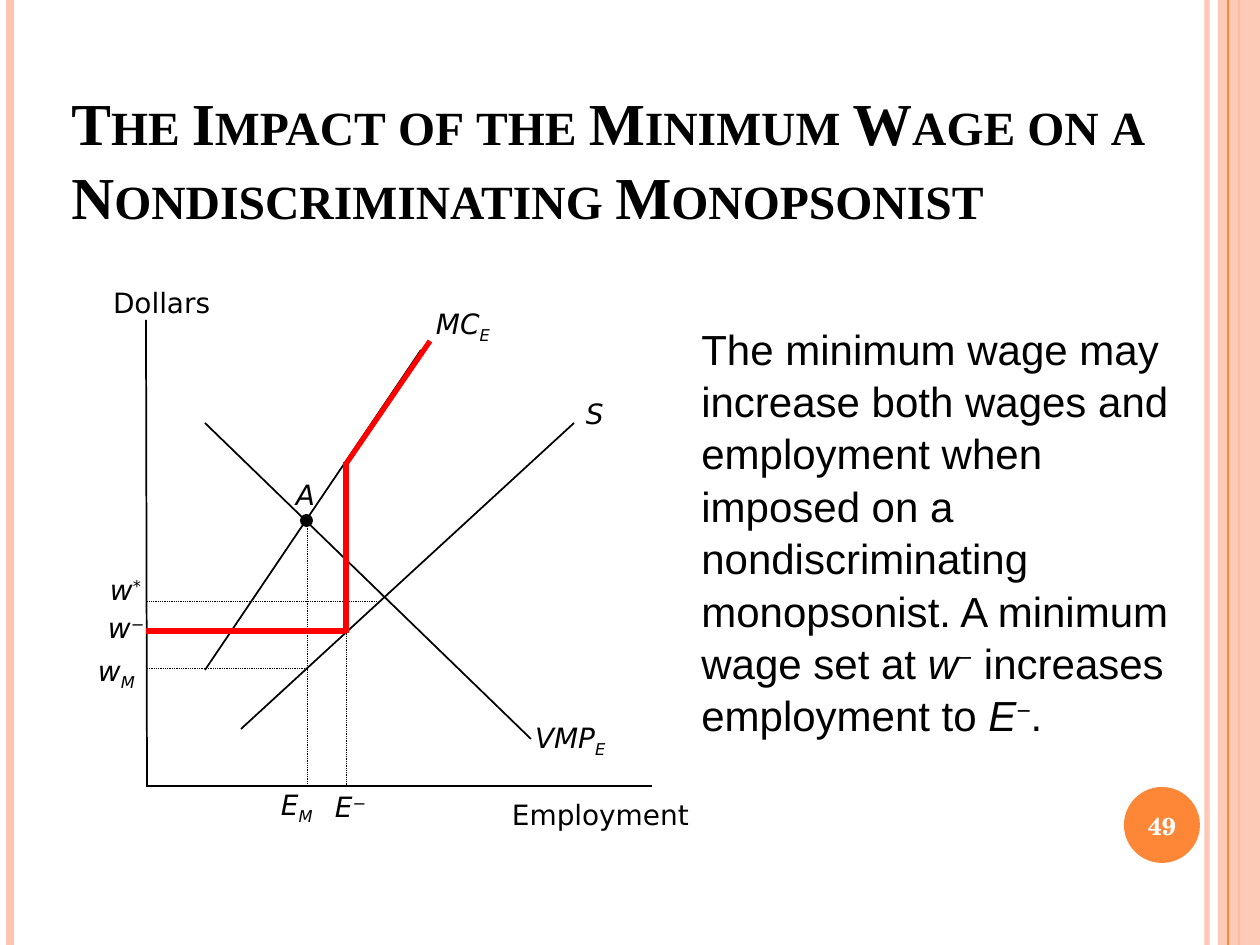
from lxml import etree
from pptx import Presentation
from pptx import util as u
from pptx.dml.color import RGBColor
from pptx.enum import dml, shapes, text
from pptx.oxml.ns import qn

SCALE = 914400 / 126
BLACK = RGBColor(0x00, 0x00, 0x00)
WHITE = RGBColor(0xFF, 0xFF, 0xFF)
RED = RGBColor(0xFF, 0x00, 0x00)
ORANGE = RGBColor(0xFE, 0x86, 0x37)
PEACH = RGBColor(0xFE, 0xC3, 0xAE)
SUPER, SUB = 30, -25

TITLE = "The Impact of the Minimum Wage on a Nondiscriminating Monopsonist"
BODY = [
    ("The minimum wage may increase both wages and employment when imposed on a "
     "nondiscriminating monopsonist. A minimum wage set at ", False, 0),
    ("w", True, 0), ("−", False, SUPER),
    (" increases employment to ", False, 0),
    ("E", True, 0), ("−", True, SUPER), (".", False, 0),
]
AXES = [(146, 320, 147, 785), (146, 786, 652, 786)]
CURVES = [(205, 423, 531, 739), (241, 729, 574, 423), (205, 670, 421, 350)]
GUIDES = [(307, 524, 307, 786), (307, 668, 146, 668),
          (346, 629, 346, 785), (377, 601, 147, 601)]
MINIMUM_WAGE_PATH = [(346, 631, 146, 631), (346, 464, 430, 341), (346, 633, 346, 462)]
LABELS = [
    (436, 307, 67, 37, [("MC", True, 0), ("E", True, SUB)]),
    (113, 286, 173, 39, [("Dollars", False, 0)]),
    (586, 397, 37, 37, [("S", True, 0)]),
    (296, 478, 37, 32, [("A", True, 0)]),
    (108, 611, 47, 37, [("w", True, 0), ("−", False, SUPER)]),
    (110, 573, 43, 37, [("w", True, 0), ("*", True, SUPER)]),
    (98, 654, 50, 37, [("w", True, 0), ("M", True, SUB)]),
    (535, 721, 82, 37, [("VMP", True, 0), ("E", True, SUB)]),
    (335, 790, 39, 37, [("E", True, 0), ("−", True, SUPER)]),
    (281, 788, 50, 37, [("E", True, 0), ("M", True, SUB)]),
    (512, 798, 217, 59, [("Employment", False, 0)]),
]


def px(*lengths):
    """Turn pixel lengths into EMU."""
    return [u.Emu(round(length * SCALE)) for length in lengths]


def set_alpha(fill_owner, percent):
    """Make the solid colour of a shape or line element partly transparent."""
    colour = fill_owner.find(qn("a:solidFill")).find(qn("a:srgbClr"))
    etree.SubElement(colour, qn("a:alpha")).set("val", str(percent * 1000))


def add_line(page, ends, colour, points, dash=None, alpha=None):
    """Draw a straight line between two points."""
    line = page.shapes.add_connector(shapes.MSO_CONNECTOR.STRAIGHT, *px(*ends))
    line.line.color.rgb = colour
    line.line.width = u.Pt(points)
    if dash:
        line.line.dash_style = dash
    properties = line._element.spPr
    etree.SubElement(properties, qn("a:effectLst"))
    if alpha:
        set_alpha(properties.find(qn("a:ln")), alpha)


def add_solid(page, kind, place, colour, alpha=None):
    """Draw a filled shape without outline."""
    shape = page.shapes.add_shape(kind, *px(*place))
    shape.shadow.inherit = False
    shape.fill.solid()
    shape.fill.fore_color.rgb = colour
    shape.line.fill.background()
    if alpha:
        set_alpha(shape._element.spPr, alpha)


def add_text(page, place, spans, font, points, colour=BLACK, bold=False, inset=True):
    """Write one paragraph of (words, italic, baseline) spans and return its box."""
    box = page.shapes.add_textbox(*px(*place))
    frame = box.text_frame
    frame.word_wrap = True
    if not inset:
        frame.margin_left = frame.margin_top = frame.margin_right = frame.margin_bottom = 0
    para = frame.paragraphs[0]
    para.font.name = font
    para.font.size = u.Pt(points)
    para.font.bold = bold
    para.font.color.rgb = colour
    for words, italic, baseline in spans:
        span = para.add_run()
        span.text = words
        span.font.italic = italic
        if baseline:
            span._r.get_or_add_rPr().set("baseline", str(baseline * 1000))
    return box


def add_frame(page):
    """Draw the stripes at the slide edges and the number disc."""
    for x, colour, points, alpha in [(1207, PEACH, 3, 93), (10, PEACH, 4.5, None),
                                     (1239, ORANGE, 1.5, None)]:
        add_line(page, (x, 0, x, 945), colour, points, alpha=alpha)
    add_solid(page, shapes.MSO_SHAPE.RECTANGLE, (1218, 0, 42, 945), PEACH, 87)
    add_line(page, (1228, 0, 1228, 945), ORANGE, 0.75)
    add_solid(page, shapes.MSO_SHAPE.OVAL, (1124, 787, 76, 76), ORANGE)


def add_diagram(page):
    """Draw the labour market diagram with its labels."""
    for ends in AXES + CURVES:
        add_line(page, ends, BLACK, 1)
    for ends in GUIDES:
        add_line(page, ends, BLACK, 0.5, dml.MSO_LINE.ROUND_DOT)
    add_solid(page, shapes.MSO_SHAPE.OVAL, (300, 514, 13, 13), BLACK)
    for ends in MINIMUM_WAGE_PATH:
        add_line(page, ends, RED, 3)
    for *place, spans in LABELS:
        add_text(page, place, spans, "DejaVu Sans", 16, inset=False)


def add_title(page):
    """Write the heading in small capitals."""
    title = add_text(page, (59, 39, 1142, 237), [(TITLE, False, 0)],
                     "Times New Roman", 34, bold=True)
    title.text_frame.vertical_anchor = text.MSO_ANCHOR.MIDDLE
    para = title.text_frame.paragraphs[0]
    para.line_spacing = 1.04
    para.runs[0]._r.get_or_add_rPr().set("cap", "small")


def add_body(page):
    """Write the explanation beside the diagram."""
    body = add_text(page, (689, 315, 494, 420), BODY, "Arial", 24)
    body.text_frame.paragraphs[0].line_spacing = 1.04


def add_number(page):
    """Write the slide number on its disc."""
    number = add_text(page, (1120, 790, 84, 72), [("49", False, 0)],
                      "TeX Gyre Schola", 14, WHITE, True)
    number.text_frame.vertical_anchor = text.MSO_ANCHOR.MIDDLE
    number.text_frame.paragraphs[0].alignment = text.PP_ALIGN.CENTER


def main():
    """Build the slide and save it."""
    deck = Presentation()
    deck.slide_width, deck.slide_height = px(1260, 945)
    page = deck.slides.add_slide(deck.slide_layouts[6])
    add_frame(page)
    add_title(page)
    add_diagram(page)
    add_body(page)
    add_number(page)
    deck.save("out.pptx")


if __name__ == "__main__":
    main()
